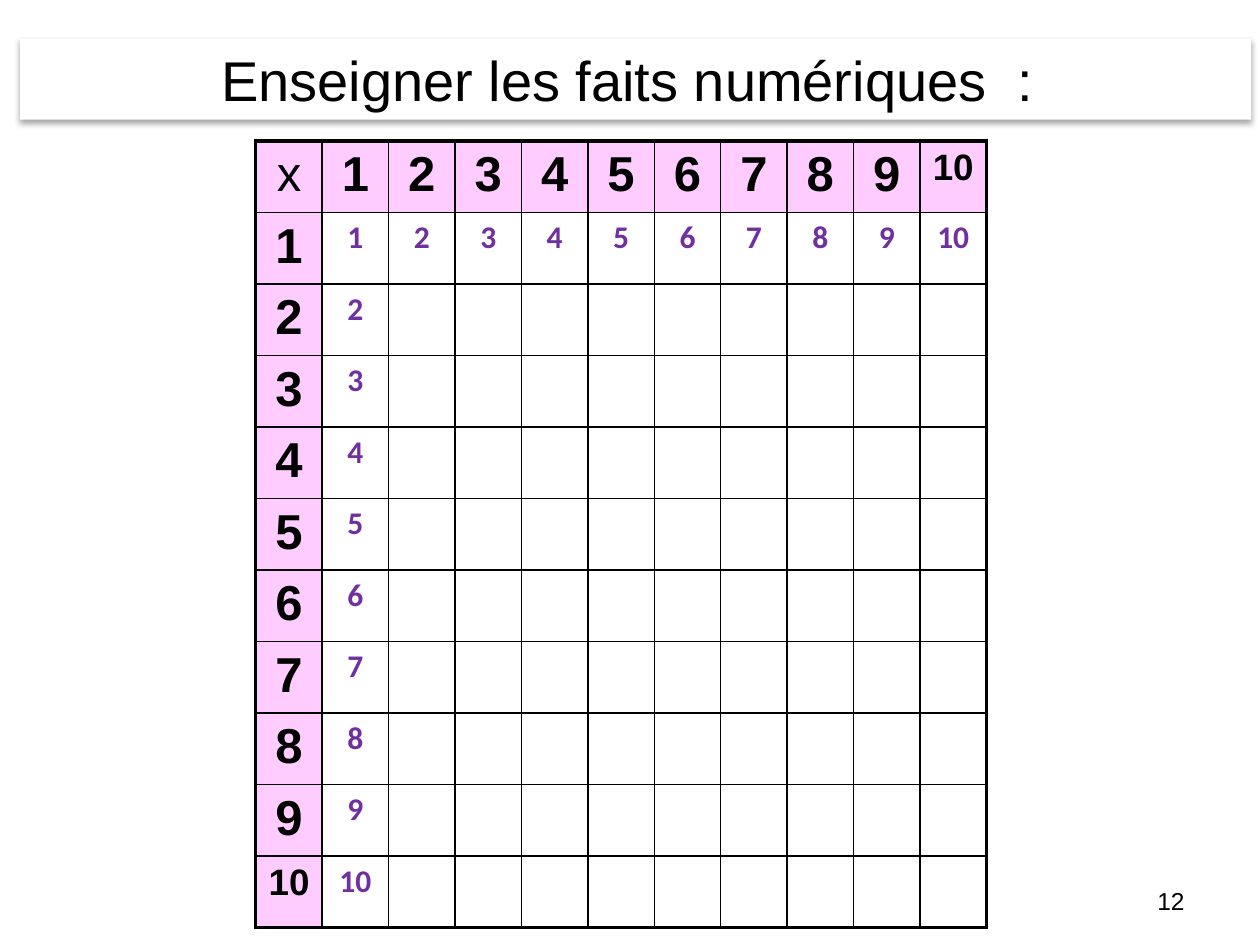
from lxml.etree import SubElement
from pptx import Presentation
from pptx.dml.color import RGBColor
from pptx.enum.shapes import MSO_SHAPE
from pptx.enum.text import MSO_ANCHOR, MSO_AUTO_SIZE, PP_ALIGN
from pptx.oxml.ns import qn
from pptx.util import Inches, Pt

BLACK, WHITE, PINK, PURPLE = "000000", "FFFFFF", "FFCCFF", "7030A0"
COUNT = 11  # header plus the factors 1 to 10
THIN, THICK = 1, 2.25


def color(code):
    return RGBColor.from_string(code)


def add_child(parent, tag, **attributes):
    return SubElement(parent, qn(tag), attributes)


def add_span(para, text, size, font="Arial", ink=BLACK, bold=False):
    span = para.add_run()
    span.text = text
    span.font.size = Pt(size)
    span.font.name = font
    span.font.bold = bold
    span.font.color.rgb = color(ink)


def add_shadow(box):
    effects = add_child(box._element.spPr, "a:effectLst")
    shadow = add_child(effects, "a:outerShdw", blurRad=str(Pt(3.1)), dist=str(Pt(1.8)),
                       dir="5400000", rotWithShape="0")
    ink = add_child(shadow, "a:srgbClr", val=BLACK)
    add_child(ink, "a:alpha", val="35000")


def add_title(page, text):
    box = page.shapes.add_shape(MSO_SHAPE.RECTANGLE, Inches(0.16), Inches(0.31),
                                Inches(9.77), Inches(0.64))
    box.fill.solid()
    box.fill.fore_color.rgb = color(WHITE)
    box.line.fill.background()
    add_shadow(box)
    frame = box.text_frame
    frame.word_wrap = True
    frame.auto_size = MSO_AUTO_SIZE.SHAPE_TO_FIT_TEXT
    frame.vertical_anchor = MSO_ANCHOR.TOP
    para = frame.paragraphs[0]
    para.alignment = PP_ALIGN.CENTER
    add_span(para, text, 32)


def add_page_number(page, text):
    box = page.shapes.add_textbox(Inches(7.17), Inches(6.95), Inches(2.33), Inches(0.4))
    frame = box.text_frame
    frame.word_wrap = True
    frame.vertical_anchor = MSO_ANCHOR.MIDDLE
    para = frame.paragraphs[0]
    para.alignment = PP_ALIGN.RIGHT
    add_span(para, text, 14)


def set_borders(cell, row, column):
    """Thick lines around the table, thin lines inside."""
    last = COUNT - 1
    outer = {"a:lnL": column == 0, "a:lnR": column == last,
             "a:lnT": row == 0, "a:lnB": row == last}
    properties = cell._tc.get_or_add_tcPr()
    for tag, is_outer in outer.items():
        line = add_child(properties, tag, w=str(Pt(THICK if is_outer else THIN)))
        add_child(add_child(line, "a:solidFill"), "a:srgbClr", val=BLACK)


def fill_cell(cell, row, column):
    set_borders(cell, row, column)
    is_header = row == 0 or column == 0
    if is_header:
        cell.fill.solid()
        cell.fill.fore_color.rgb = color(PINK)
    else:
        cell.fill.background()
    # Only the headers and the products by 1 are written
    if min(row, column) > 1:
        return
    para = cell.text_frame.paragraphs[0]
    para.alignment = PP_ALIGN.CENTER
    spacing = add_child(para._p.get_or_add_pPr(), "a:spcBef")
    add_child(spacing, "a:spcPct", val="20000")
    factor = max(row, column)
    if factor == 0:
        add_span(para, "x", 28)
    elif is_header:
        add_span(para, str(factor), 21 if factor == 10 else 28, bold=True)
    else:
        add_span(para, str(factor), 18, "Calibri", PURPLE, bold=True)


def add_times_table(page):
    width, height = Inches(5.8), Inches(6.23)
    table = page.shapes.add_table(COUNT, COUNT, Inches(2.03), Inches(1.12),
                                  width, height).table
    table.first_row = False
    table.horz_banding = False
    for column in table.columns:
        column.width = width // COUNT
    for row in table.rows:
        row.height = height // COUNT
    for row in range(COUNT):
        for column in range(COUNT):
            fill_cell(table.cell(row, column), row, column)


def main():
    deck = Presentation()
    deck.slide_width, deck.slide_height = Inches(10), Inches(7.5)
    page = deck.slides.add_slide(deck.slide_layouts[6])
    add_page_number(page, "12")
    add_times_table(page)
    add_title(page, "Enseigner les faits numériques  : ")
    deck.save("out.pptx")


if __name__ == "__main__":
    main()
